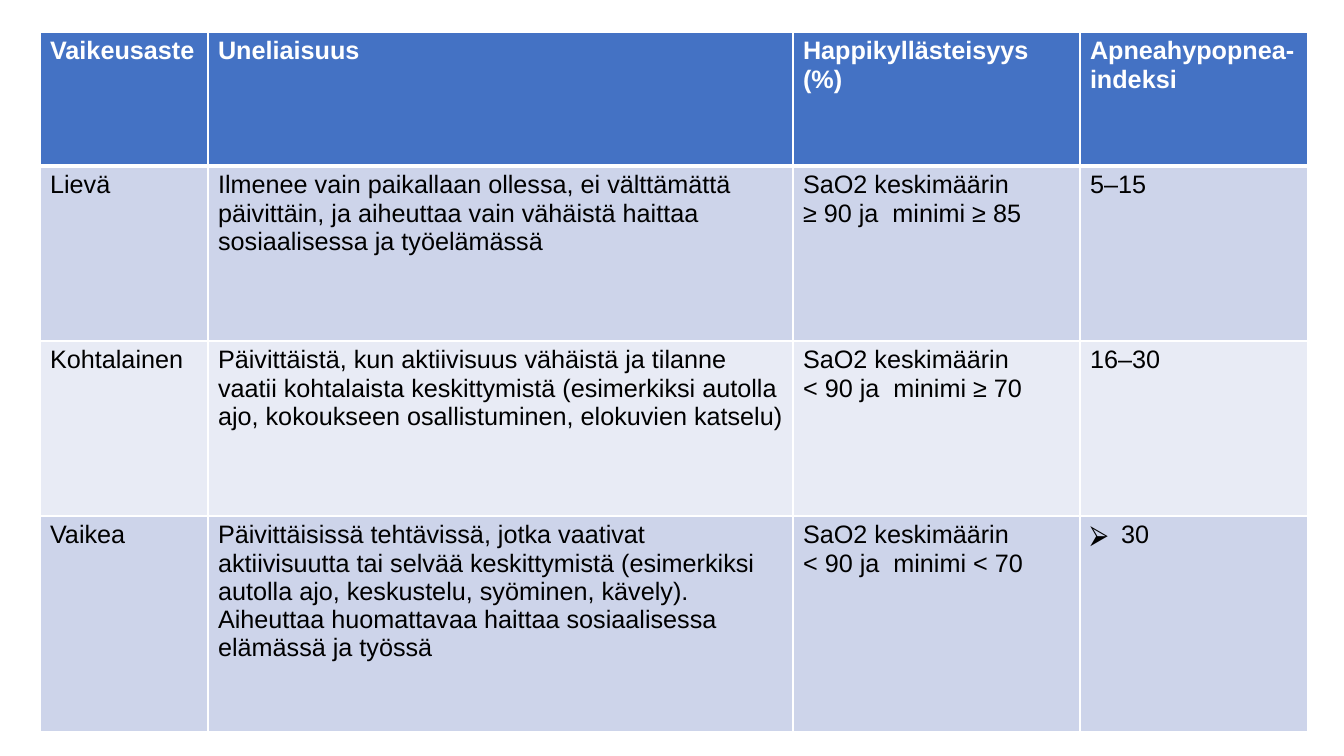
from lxml import etree
from pptx import Presentation
from pptx import util as u
from pptx.dml.color import RGBColor
from pptx.oxml import ns

SCALE = 914400 / 100.8  # EMU in one px

WHITE = RGBColor(0xFF, 0xFF, 0xFF)
BLACK = RGBColor(0x00, 0x00, 0x00)
HEADER_BLUE = RGBColor(0x44, 0x72, 0xC4)
BAND_DARK = RGBColor(0xCD, 0xD4, 0xEA)
BAND_LIGHT = RGBColor(0xE8, 0xEB, 0xF5)

COLUMN_WIDTHS = [168, 585, 287, 228]
ROW_HEIGHTS = [134, 175, 175, 216]
BULLET = "⮚"

# Each line of a cell is a paragraph
SEVERITY_ROWS = [
    ["Vaikeusaste", "Uneliaisuus", "Happikyllästeisyys (%)", "Apneahypopnea-indeksi"],
    ["Lievä",
     "Ilmenee vain paikallaan ollessa, ei välttämättä päivittäin, ja aiheuttaa "
     "vain vähäistä haittaa sosiaalisessa ja työelämässä",
     "SaO2 keskimäärin\n≥ 90 ja  minimi ≥ 85",
     "5–15"],
    ["Kohtalainen",
     "Päivittäistä, kun aktiivisuus vähäistä ja tilanne vaatii kohtalaista "
     "keskittymistä (esimerkiksi autolla ajo, kokoukseen osallistuminen, "
     "elokuvien katselu)",
     "SaO2 keskimäärin\n< 90 ja  minimi ≥ 70",
     "16–30"],
    ["Vaikea",
     "Päivittäisissä tehtävissä, jotka vaativat aktiivisuutta tai selvää "
     "keskittymistä (esimerkiksi autolla ajo, keskustelu, syöminen, kävely).  "
     "Aiheuttaa huomattavaa haittaa sosiaalisessa elämässä ja työssä",
     "SaO2 keskimäärin\n< 90 ja  minimi < 70",
     BULLET + "30"],
]


def px(length):
    return u.Emu(round(length * SCALE))


def add_bullet(paragraph, indent=31):
    props = paragraph._p.get_or_add_pPr()
    props.set("marL", str(px(indent)))
    props.set("indent", str(-px(indent)))
    color = etree.SubElement(props, ns.qn("a:buClr"))
    etree.SubElement(color, ns.qn("a:srgbClr"), val=str(BLACK))
    etree.SubElement(props, ns.qn("a:buFont"), typeface="Arial")
    etree.SubElement(props, ns.qn("a:buChar"), char=BULLET)


def write_text(frame, content, size=18, color=BLACK, bold=False):
    for index, line in enumerate(content.split("\n")):
        paragraph = frame.add_paragraph() if index else frame.paragraphs[0]
        if line.startswith(BULLET):
            add_bullet(paragraph)
        run = paragraph.add_run()
        run.text = line.removeprefix(BULLET)
        run.font.name = "Arial"
        run.font.size = u.Pt(size)
        run.font.bold = bold
        run.font.color.rgb = color


def set_borders(cell, top=1, bottom=1):
    props = cell._tc.get_or_add_tcPr()
    for side, width in (("L", 1), ("R", 1), ("T", top), ("B", bottom)):
        line = etree.SubElement(props, ns.qn(f"a:ln{side}"), w=str(u.Pt(width)))
        fill = etree.SubElement(line, ns.qn("a:solidFill"))
        etree.SubElement(fill, ns.qn("a:srgbClr"), val=str(WHITE))


def fill_cell(cell, color):
    cell.fill.solid()
    cell.fill.fore_color.rgb = color


def add_severity_table(slide, left, top):
    severity = slide.shapes.add_table(
        len(ROW_HEIGHTS), len(COLUMN_WIDTHS), px(left), px(top),
        px(sum(COLUMN_WIDTHS)), px(sum(ROW_HEIGHTS))).table
    for column, width in zip(severity.columns, COLUMN_WIDTHS):
        column.width = px(width)
    for row, height in zip(severity.rows, ROW_HEIGHTS):
        row.height = px(height)

    for r, row in enumerate(SEVERITY_ROWS):
        is_header = r == 0
        band = HEADER_BLUE if is_header else BAND_DARK if r % 2 else BAND_LIGHT
        for c, content in enumerate(row):
            cell = severity.cell(r, c)
            # The thick rule lies between the header and the first grade
            set_borders(cell, top=3 if r == 1 else 1, bottom=3 if is_header else 1)
            fill_cell(cell, band)
            write_text(cell.text_frame, content, bold=is_header,
                       color=WHITE if is_header else BLACK)


def main():
    deck = Presentation()
    deck.slide_width, deck.slide_height = px(1344), px(756)
    slide = deck.slides.add_slide(deck.slide_layouts[6])
    add_severity_table(slide, left=40, top=32)
    deck.save("out.pptx")


if __name__ == "__main__":
    main()
